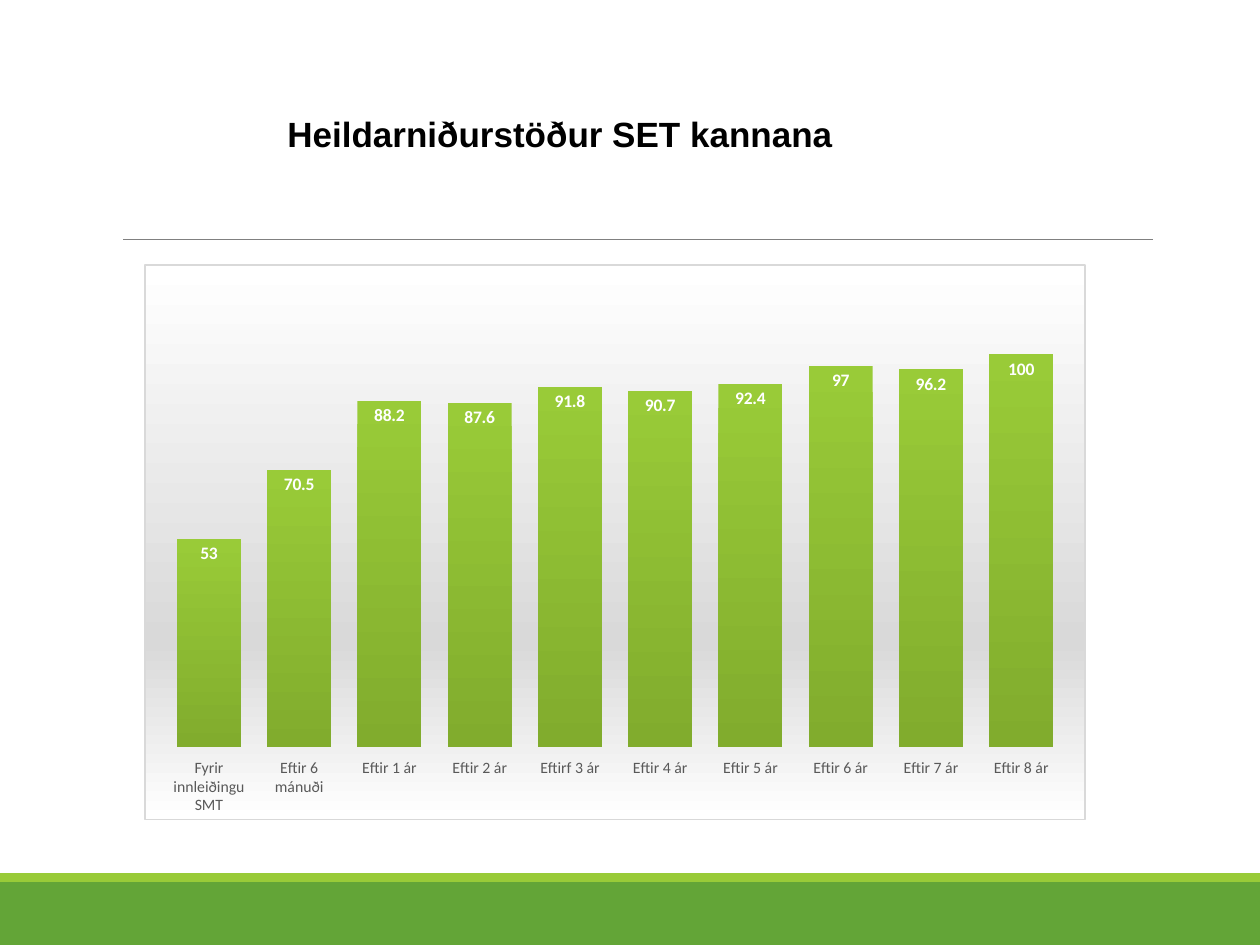
from dataclasses import dataclass

from pptx import Presentation
from pptx.chart.data import CategoryChartData
from pptx.dml.color import RGBColor
from pptx.enum.chart import XL_CHART_TYPE as ChartType
from pptx.enum.chart import XL_LABEL_POSITION as LabelPosition
from pptx.enum.chart import XL_TICK_LABEL_POSITION as TickLabelPosition
from pptx.enum.chart import XL_TICK_MARK as TickMark
from pptx.enum.shapes import MSO_CONNECTOR as Connector
from pptx.enum.shapes import MSO_SHAPE as Shape
from pptx.enum.text import MSO_ANCHOR as Anchor
from pptx.enum.text import PP_ALIGN as Align
from pptx.oxml import parse_xml
from pptx.oxml.ns import nsdecls, qn
from pptx.util import Pt


@dataclass(frozen=True)
class Theme:
    green: str = "63A537"
    lime: str = "99CB38"
    olive: str = "81AC2D"
    black: str = "000000"
    white: str = "FFFFFF"
    silver: str = "D9D9D9"
    rule: str = "808080"
    axis_text: str = "595959"
    title_font: str = "Arial"
    chart_font: str = "Calibri"
    title_size: float = 20
    label_size: float = 10
    axis_size: float = 9


@dataclass(frozen=True)
class Band:
    top: float
    height: float
    color: str


THEME = Theme()
WIDTH, HEIGHT = 720, 540
BANDS = [Band(504, 36, THEME.green), Band(499, 5, THEME.lime)]
RESULTS = {
    "Fyrir innleiðingu SMT": 53,
    "Eftir 6 mánuði": 70.5,
    "Eftir 1 ár": 88.2,
    "Eftir 2 ár": 87.6,
    "Eftirf 3 ár": 91.8,
    "Eftir 4 ár": 90.7,
    "Eftir 5 ár": 92.4,
    "Eftir 6 ár": 97,
    "Eftir 7 ár": 96.2,
    "Eftir 8 ár": 100,
}
BACKDROP = [(0, THEME.white), (68, THEME.silver), (100, THEME.white)]
PLOT_LAYOUT = {"x": 0.02, "y": 0.02, "w": 0.96, "h": 0.85}


def rgb(color: str) -> RGBColor:
    return RGBColor.from_string(color)


def format_font(font, *, name: str, size: float, color: str, bold: bool = False) -> None:
    font.name, font.size, font.bold = name, Pt(size), bold
    font.color.rgb = rgb(color)


def write_text(frame, text: str, *, align=Align.LEFT, anchor=Anchor.MIDDLE, **font_format) -> None:
    frame.word_wrap = True
    frame.vertical_anchor = anchor
    para = frame.paragraphs[0]
    para.alignment = align
    span = para.add_run()
    span.text = text
    format_font(span.font, **font_format)


def draw_band(page, band: Band) -> None:
    box = page.shapes.add_shape(Shape.RECTANGLE, 0, Pt(band.top), Pt(WIDTH), Pt(band.height))
    box.shadow.inherit = False
    box.fill.solid()
    box.fill.fore_color.rgb = rgb(band.color)
    box.line.fill.background()


def draw_rule(page, left: float, right: float, top: float) -> None:
    rule = page.shapes.add_connector(Connector.STRAIGHT, Pt(left), Pt(top), Pt(right), Pt(top))
    rule.line.color.rgb = rgb(THEME.rule)
    rule.line.width = Pt(0.5)
    rule.element.spPr.append(parse_xml(f"<a:effectLst {nsdecls('a')}/>"))


def draw_title(page, text: str) -> None:
    title = page.shapes.title
    title.left, title.top, title.width, title.height = Pt(157), Pt(60.5), Pt(505), Pt(31.5)
    write_text(title.text_frame, text, name=THEME.title_font, size=THEME.title_size,
               color=THEME.black, bold=True)


def style_backdrop(chart) -> None:
    stops = "".join(
        f'<a:gs pos="{place * 1000}"><a:srgbClr val="{color}"/></a:gs>' for place, color in BACKDROP
    )
    area = chart.element.find(qn("c:chart"))
    area.addnext(parse_xml(
        f"<c:spPr {nsdecls('c', 'a')}><a:gradFill><a:gsLst>{stops}</a:gsLst>"
        f'<a:lin ang="5400000" scaled="0"/></a:gradFill><a:ln w="{Pt(0.75)}"><a:solidFill>'
        f'<a:srgbClr val="{THEME.silver}"/></a:solidFill></a:ln></c:spPr>'
    ))
    places = "".join(f'<c:{key} val="{value}"/>' for key, value in PLOT_LAYOUT.items())
    area.find(qn("c:plotArea")).insert(0, parse_xml(
        f"<c:layout {nsdecls('c')}><c:manualLayout><c:layoutTarget val=\"inner\"/>"
        f'<c:xMode val="edge"/><c:yMode val="edge"/>{places}</c:manualLayout></c:layout>'
    ))


def style_axes(chart) -> None:
    values = chart.value_axis
    values.minimum_scale, values.maximum_scale = 0, 120
    values.has_major_gridlines = False
    values.visible = False
    categories = chart.category_axis
    categories.major_tick_mark = categories.minor_tick_mark = TickMark.NONE
    categories.tick_label_position = TickLabelPosition.LOW
    categories.format.line.fill.background()
    format_font(categories.tick_labels.font, name=THEME.chart_font, size=THEME.axis_size,
                color=THEME.axis_text)


def style_columns(plot) -> None:
    plot.gap_width = 41
    plot.vary_by_categories = False
    series = plot.series[0]
    fill = series.format.fill
    fill.gradient()
    fill.gradient_angle = 270
    for stop, color in zip(fill.gradient_stops, (THEME.lime, THEME.olive)):
        stop.color.rgb = rgb(color)
    labels = series.data_labels
    labels.show_value = True
    labels.position = LabelPosition.INSIDE_END
    format_font(labels.font, name=THEME.chart_font, size=THEME.label_size,
                color=THEME.white, bold=True)


def draw_chart(page, results: dict[str, float]) -> None:
    data = CategoryChartData()
    data.categories = list(results)
    data.add_series("Series 1", list(results.values()))
    chart = page.shapes.add_chart(ChartType.COLUMN_CLUSTERED, Pt(82.5), Pt(151), Pt(538),
                                  Pt(317.5), data).chart
    chart.has_title = chart.has_legend = False
    format_font(chart.font, name=THEME.chart_font, size=THEME.label_size, color=THEME.black)
    style_backdrop(chart)
    style_axes(chart)
    style_columns(chart.plots[0])


def main() -> None:
    deck = Presentation()
    deck.slide_width, deck.slide_height = Pt(WIDTH), Pt(HEIGHT)
    page = deck.slides.add_slide(deck.slide_layouts[5])
    for band in BANDS:
        draw_band(page, band)
    draw_rule(page, 70.5, 659, 137)
    draw_title(page, "Heildarniðurstöður SET kannana")
    draw_chart(page, RESULTS)
    deck.save("out.pptx")


if __name__ == "__main__":
    main()
